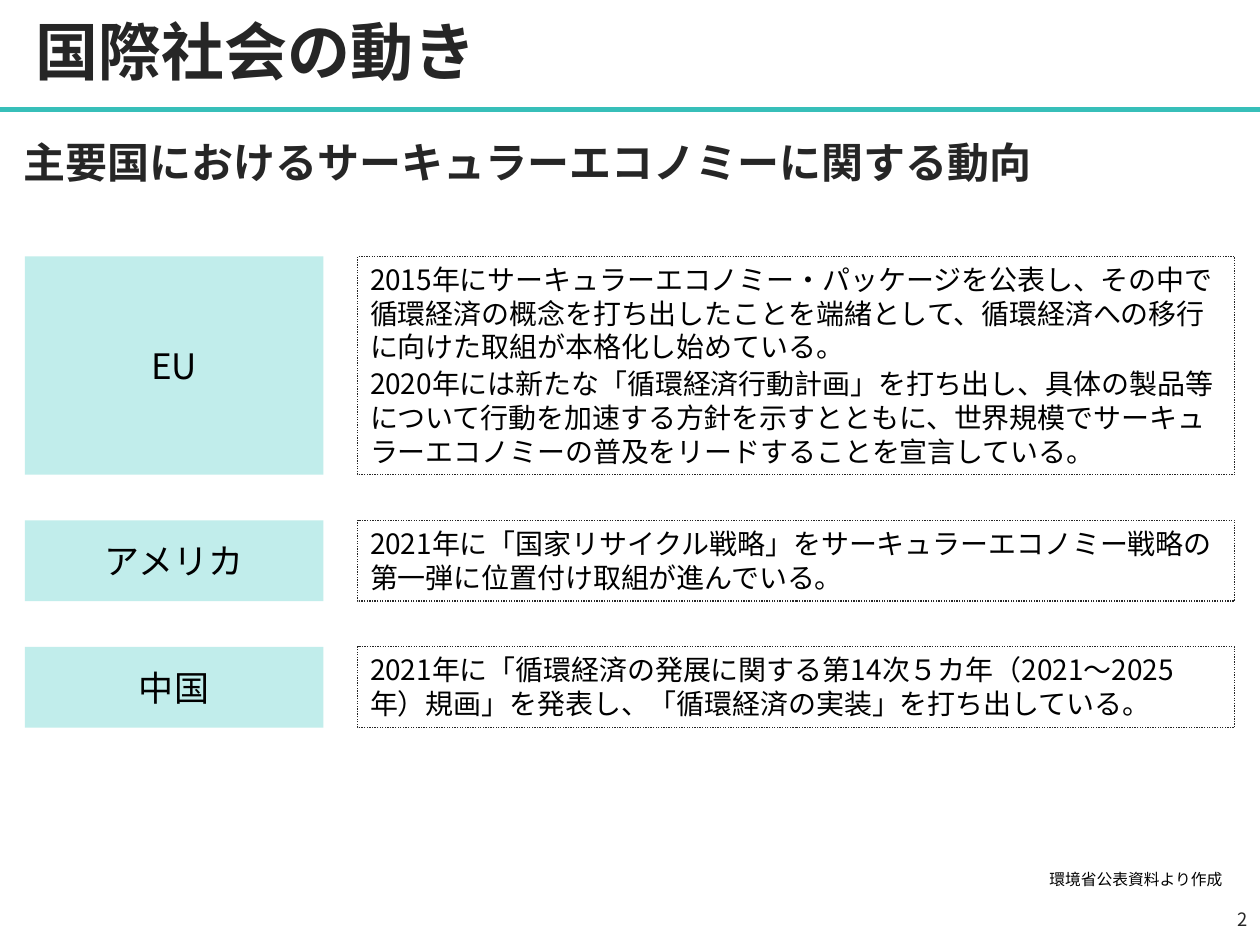
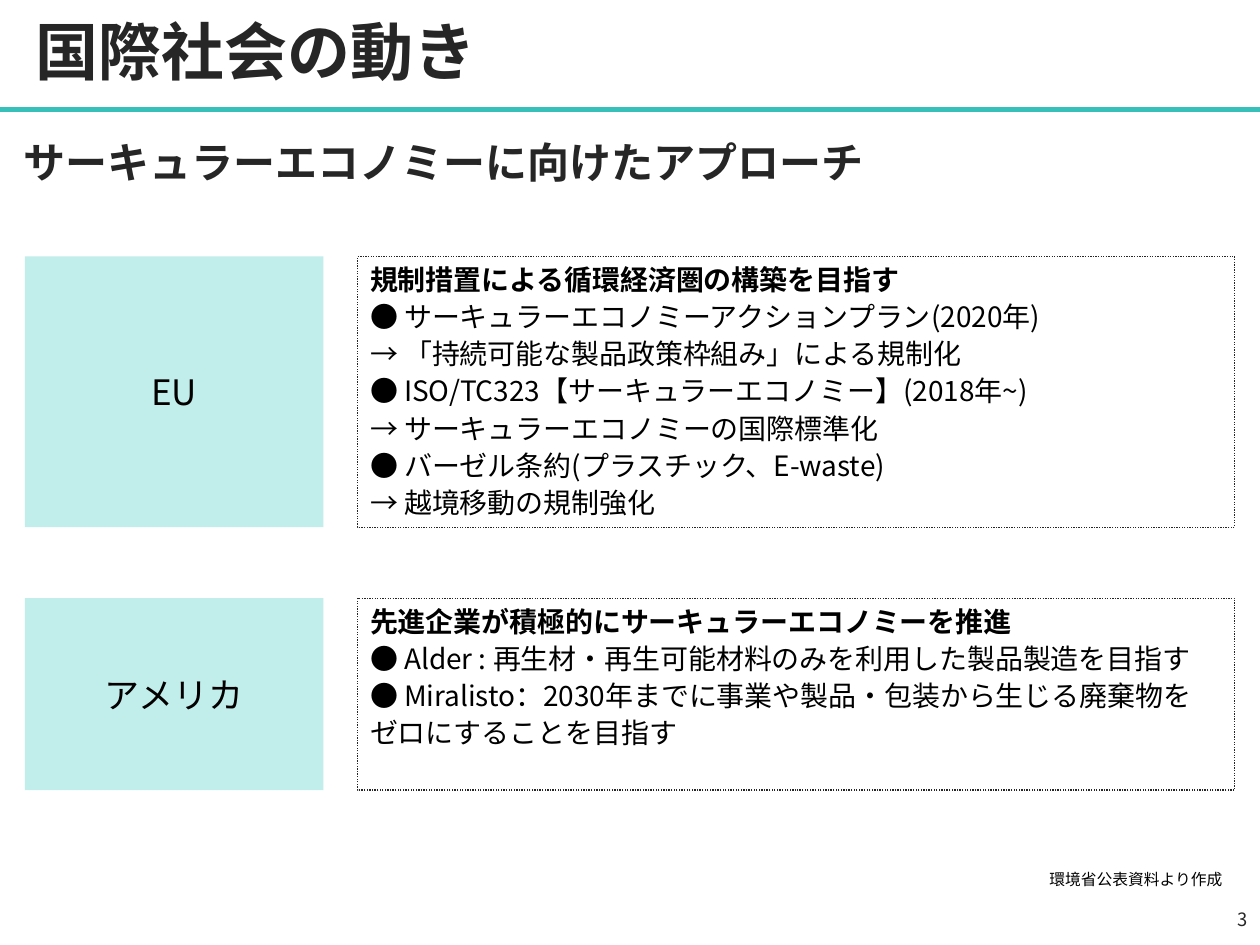
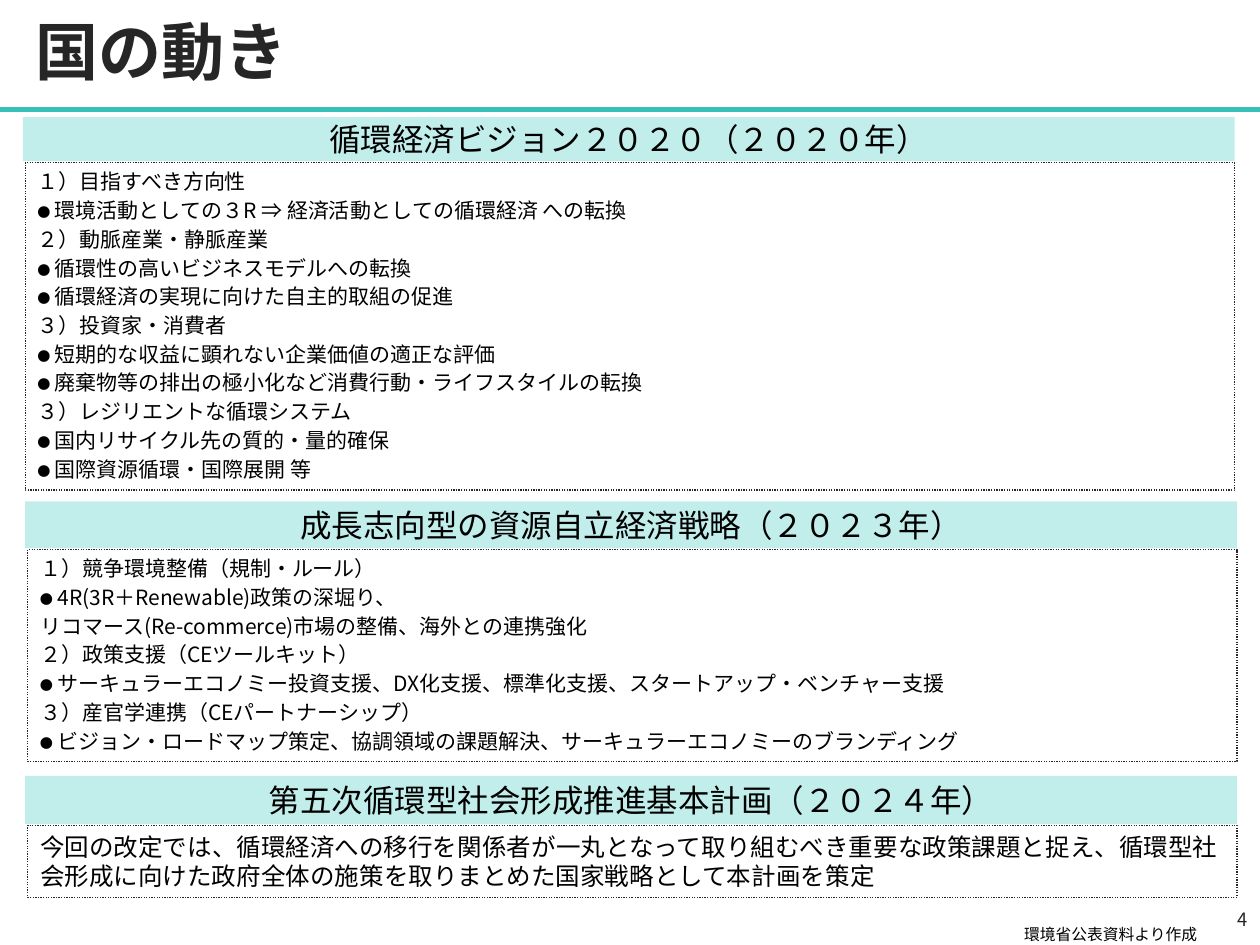
from dataclasses import dataclass

from lxml.etree import SubElement
from pptx import Presentation
from pptx.dml.color import RGBColor
from pptx.enum.dml import MSO_LINE_DASH_STYLE as Dash
from pptx.enum.shapes import MSO_CONNECTOR as Connector, MSO_SHAPE as Shape
from pptx.enum.text import MSO_ANCHOR as Anchor, MSO_AUTO_SIZE as AutoSize, PP_ALIGN as Align
from pptx.oxml.ns import qn
from pptx.util import Cm, Pt

SOURCE_NOTE = "環境省公表資料より作成"
FIRST_PAGE_NUMBER = 2

# Rows: label, height (cm), whether the first line is bold, lines
COUNTRY_PAGES = [
    {
        "title": "国際社会の動き",
        "subtitle": "主要国におけるサーキュラーエコノミーに関する動向",
        "gap": 0.92,
        "rows": [
            ("EU", 4.4, False, [
                "2015年にサーキュラーエコノミー・パッケージを公表し、その中で循環経済の概念を打ち出したことを端緒として、循環経済への移行に向けた取組が本格化し始めている。",
                "2020年には新たな「循環経済行動計画」を打ち出し、具体の製品等について行動を加速する方針を示すとともに、世界規模でサーキュラーエコノミーの普及をリードすることを宣言している。",
            ]),
            ("アメリカ", 1.63, False, [
                "2021年に「国家リサイクル戦略」をサーキュラーエコノミー戦略の第一弾に位置付け取組が進んでいる。",
            ]),
            ("中国", 1.63, False, [
                "2021年に「循環経済の発展に関する第14次５カ年（2021～2025 年）規画」を発表し、「循環経済の実装」を打ち出している。",
            ]),
        ],
    },
    {
        "title": "国際社会の動き",
        "subtitle": "サーキュラーエコノミーに向けたアプローチ",
        "gap": 1.43,
        "rows": [
            ("EU", 5.46, True, [
                "規制措置による循環経済圏の構築を目指す",
                "● サーキュラーエコノミーアクションプラン(2020年)",
                "→ 「持続可能な製品政策枠組み」による規制化",
                "● ISO/TC323【サーキュラーエコノミー】(2018年~)",
                "→ サーキュラーエコノミーの国際標準化",
                "● バーゼル条約(プラスチック、E-waste)",
                "→ 越境移動の規制強化",
            ]),
            ("アメリカ", 3.87, True, [
                "先進企業が積極的にサーキュラーエコノミーを推進",
                "● Alder : 再生材・再生可能材料のみを利用した製品製造を目指す",
                "● Miralisto：2030年までに事業や製品・包装から生じる廃棄物を",
                "ゼロにすることを目指す",
            ]),
        ],
    },
]

# Sections: heading, left, top, band height, body height (cm), text size, lines
POLICY_PAGE = {
    "title": "国の動き",
    "sections": [
        ("循環経済ビジョン２０２０（２０２０年）", 0.46, 2.36, 0.89, 6.6, 12, [
            "１）目指すべき方向性",
            "⚫ 環境活動としての３R ⇒ 経済活動としての循環経済 への転換",
            "２）動脈産業・静脈産業",
            "⚫ 循環性の高いビジネスモデルへの転換",
            "⚫ 循環経済の実現に向けた自主的取組の促進",
            "３）投資家・消費者",
            "⚫ 短期的な収益に顕れない企業価値の適正な評価",
            "⚫ 廃棄物等の排出の極小化など消費行動・ライフスタイルの転換",
            "３）レジリエントな循環システム",
            "⚫ 国内リサイクル先の質的・量的確保",
            "⚫ 国際資源循環・国際展開 等",
        ]),
        ("成長志向型の資源自立経済戦略（２０２３年）", 0.51, 10.11, 0.94, 4.27, 12, [
            "１）競争環境整備（規制・ルール）",
            "⚫ 4R(3R＋Renewable)政策の深堀り、",
            "リコマース(Re-commerce)市場の整備、海外との連携強化",
            "２）政策支援（CEツールキット）",
            "⚫ サーキュラーエコノミー投資支援、DX化支援、標準化支援、スタートアップ・ベンチャー支援",
            "３）産官学連携（CEパートナーシップ）",
            "⚫ ビジョン・ロードマップ策定、協調領域の課題解決、サーキュラーエコノミーのブランディング",
        ]),
        ("第五次循環型社会形成推進基本計画（２０２４年）", 0.51, 15.64, 0.97, 1.45, 14, [
            "今回の改定では、循環経済への移行を関係者が一丸となって取り組むべき重要な政策課題と捉え、循環型社会形成に向けた政府全体の施策を取りまとめた国家戦略として本計画を策定",
        ]),
    ],
}


@dataclass(frozen=True)
class Theme:
    font: str = "Noto Sans CJK JP"
    accent: RGBColor = RGBColor(0x37, 0xBF, 0xB9)
    band: RGBColor = RGBColor(0xC1, 0xED, 0xEB)
    dark: RGBColor = RGBColor(0x26, 0x26, 0x26)
    black: RGBColor = RGBColor(0, 0, 0)
    title: float = 36
    subtitle: float = 24
    label: float = 20
    heading: float = 18
    body: float = 16
    number: float = 10.5
    note: float = 9


THEME = Theme()
PAGE_WIDTH, PAGE_HEIGHT = 25.4, 19.05
TITLE_WIDTH, TITLE_HEIGHT = 24.43, 2.21
ROWS_TOP = 5.17
LABEL_LEFT, LABEL_WIDTH = 0.5, 6.02
BODY_LEFT, BODY_WIDTH = 7.21, 17.68
SECTION_WIDTH, SECTION_INSET, SECTION_GAP = 24.43, 0.05, 0.03


def write(shape, lines, size, color=THEME.black, bold_lines=0, align=Align.LEFT,
          anchor=Anchor.MIDDLE, before=0, spacing=None):
    """Fill a shape with one paragraph per line; the first bold_lines are bold."""
    frame = shape.text_frame
    frame.text = "\n".join(lines)
    frame.word_wrap = True
    frame.vertical_anchor = anchor
    for index, para in enumerate(frame.paragraphs):
        para.alignment = align
        para.space_before = Pt(before)
        para.line_spacing = spacing
        for span in para.runs:
            font = span.font
            font.size = Pt(size)
            font.bold = index < bold_lines
            font.color.rgb = color
            font.name = THEME.font
            SubElement(font._element, qn("a:ea"), typeface=THEME.font)


def add_text(page, area, text, size, **style):
    box = page.shapes.add_textbox(*map(Cm, area))
    write(box, [text], size, **style)
    return box


def add_rectangle(page, area):
    box = page.shapes.add_shape(Shape.RECTANGLE, *map(Cm, area))
    box.shadow.inherit = False
    return box


def add_band(page, area, text, size):
    box = add_rectangle(page, area)
    box.fill.solid()
    box.fill.fore_color.rgb = THEME.band
    box.line.fill.background()
    write(box, [text], size, align=Align.CENTER)


def add_body(page, area, lines, size, bold_lines=0):
    box = add_rectangle(page, area)
    box.fill.background()
    box.line.color.rgb = THEME.dark
    box.line.width = Pt(0.75)
    box.line.dash_style = Dash.ROUND_DOT
    write(box, lines, size, bold_lines=bold_lines, anchor=Anchor.TOP, before=2)
    box.text_frame.auto_size = AutoSize.SHAPE_TO_FIT_TEXT


def add_page(deck, title, note_left, note_top):
    """Add a page with the title, rule, source note and page number."""
    page = deck.slides.add_slide(deck.slide_layouts[6])
    rule = page.shapes.add_connector(
        Connector.STRAIGHT, 0, Cm(TITLE_HEIGHT), Cm(PAGE_WIDTH), Cm(TITLE_HEIGHT))
    rule.line.color.rgb = THEME.accent
    rule.line.width = Pt(3)
    SubElement(rule._element.spPr, qn("a:effectLst"))
    add_text(page, (0.46, 0, TITLE_WIDTH, TITLE_HEIGHT), title, THEME.title,
             color=THEME.dark, bold_lines=1, spacing=0.9)
    note = add_text(page, (note_left, note_top, 11.68, 0.64), SOURCE_NOTE, THEME.note,
                    align=Align.RIGHT, anchor=Anchor.TOP)
    note.text_frame.auto_size = AutoSize.SHAPE_TO_FIT_TEXT
    number = FIRST_PAGE_NUMBER + len(deck.slides) - 1
    add_text(page, (19.69, 18.03, 5.71, 1.02), str(number), THEME.number,
             color=THEME.dark, align=Align.RIGHT)
    return page


def add_country_page(deck, content):
    page = add_page(deck, content["title"], 13.21, 17.4)
    add_text(page, (0.23, TITLE_HEIGHT, TITLE_WIDTH, TITLE_HEIGHT), content["subtitle"],
             THEME.subtitle, color=THEME.dark, bold_lines=1, spacing=0.9)
    top = ROWS_TOP
    for label, height, has_lead, lines in content["rows"]:
        add_band(page, (LABEL_LEFT, top, LABEL_WIDTH, height), label, THEME.label)
        add_body(page, (BODY_LEFT, top, BODY_WIDTH, height), lines, THEME.body, int(has_lead))
        top += height + content["gap"]


def add_policy_page(deck, content):
    page = add_page(deck, content["title"], 12.7, 18.52)
    for heading, left, top, band_height, body_height, size, lines in content["sections"]:
        add_band(page, (left, top, SECTION_WIDTH, band_height), heading, THEME.heading)
        body_area = (left + SECTION_INSET, top + band_height + SECTION_GAP,
                     SECTION_WIDTH - SECTION_INSET, body_height)
        add_body(page, body_area, lines, size)


def main():
    deck = Presentation()
    deck.slide_width, deck.slide_height = Cm(PAGE_WIDTH), Cm(PAGE_HEIGHT)
    for content in COUNTRY_PAGES:
        add_country_page(deck, content)
    add_policy_page(deck, POLICY_PAGE)
    deck.save("out.pptx")


if __name__ == "__main__":
    main()
